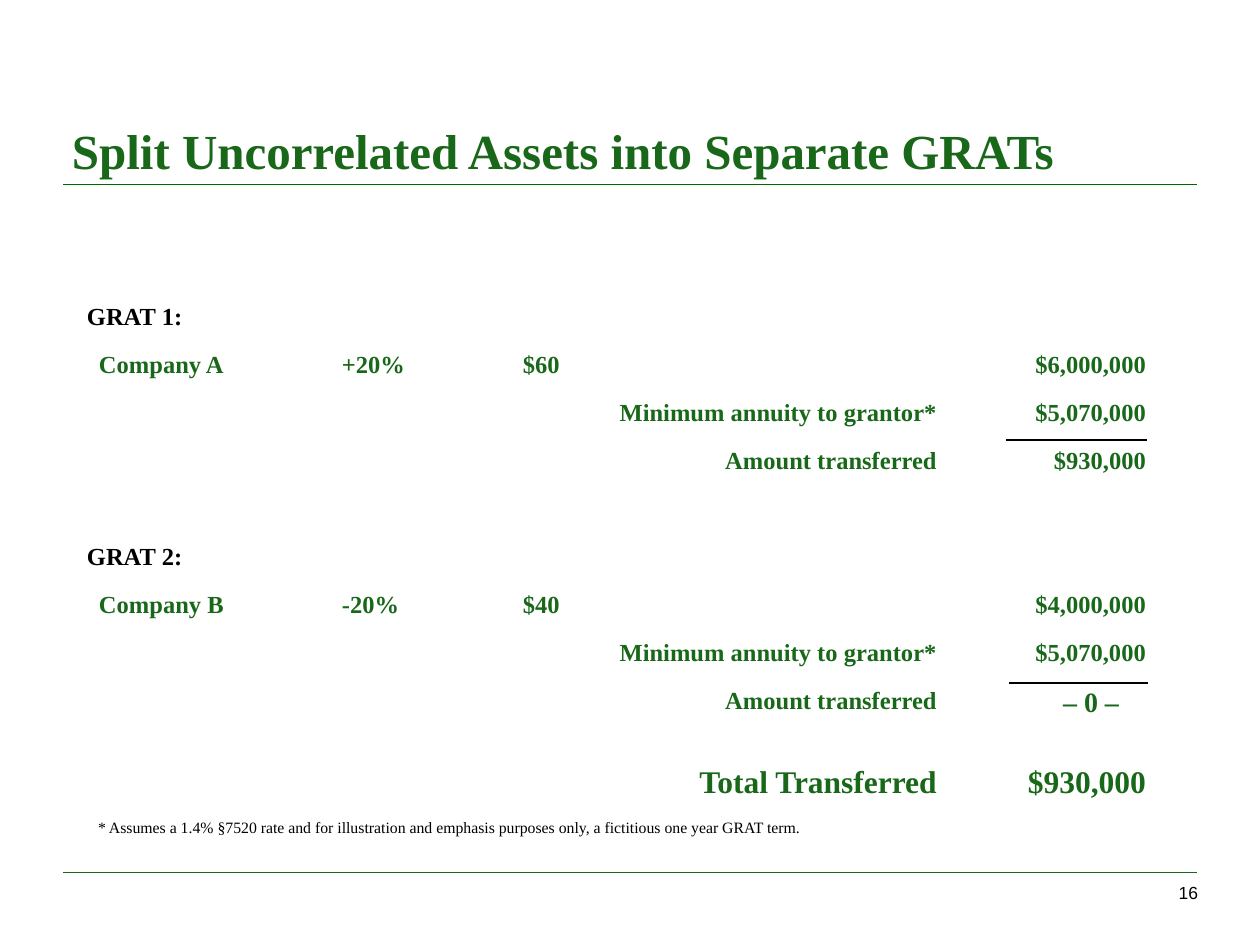
from pptx import Presentation
from pptx.dml.color import RGBColor
from pptx.enum.text import MSO_ANCHOR, PP_ALIGN
from pptx.oxml.xmlchemy import OxmlElement
from pptx.util import Emu, Pt

PX = 914400 // 126  # EMU in one px
GREEN = RGBColor(0x19, 0x68, 0x19)
RULE_GREEN = RGBColor(0x00, 0x66, 0x00)
BLACK = RGBColor(0, 0, 0)
SERIF, SANS = "Times New Roman", "Arial"

TITLE = "Split Uncorrelated Assets into Separate GRATs"
FOOTNOTE = ("* Assumes a 1.4% §7520 rate and for illustration and emphasis "
            "purposes only, a fictitious one year GRAT term.")
PAGE_NUMBER = "16"

# Table rows: row height, text size, four cells
ANNUITY, TRANSFERRED = "Minimum annuity to grantor*", "Amount transferred"
ROWS = [
    (48, 14, ("GRAT 1:", "", "", "")),
    (48, 14, ("Company A", "+20%", "$60", "$6,000,000")),
    (48, 14, ("", "", ANNUITY, "$5,070,000")),
    (48, 14, ("", "", TRANSFERRED, "$930,000")),
    (48, 14, ("", "", "", "")),
    (48, 14, ("GRAT 2:", "", "", "")),
    (48, 14, ("Company B", "-20%", "$40", "$4,000,000")),
    (48, 14, ("", "", ANNUITY, "$5,070,000")),
    (53, 14, ("", "", TRANSFERRED, "– 0 –")),
    (24, 5, ("", "", "", "")),
    (48, 18, ("", "", "Total Transferred", "$930,000")),
]
COLUMNS = (255, 181, 436, 209)
TABLE_LEFT, TABLE_TOP = 76, 296
SIDE, EDGE = 11, 5  # cell and box margins
ENTRY_INDENT, ZERO_MARGIN, ZERO_SIZE = 23, 38, 16

# Lines: start x, end x, y, colour, width in points
LINES = [
    (63, 1197, 184, RULE_GREEN, 0.5),
    (63, 1197, 872, GREEN, 0.5),
    (1006, 1147, 440, BLACK, 1.5),
    (1009, 1148, 683, BLACK, 1.5),
]


def px(value):
    return Emu(value * PX)


def add_span(para, text, size, color, font=SERIF, bold=False):
    span = para.add_run()
    span.text = text
    span.font.name, span.font.size = font, Pt(size)
    span.font.bold, span.font.color.rgb = bold, color


def set_margins(target, side, edge):
    target.margin_left = target.margin_right = px(side)
    target.margin_top = target.margin_bottom = px(edge)


def add_text(page, place, text, size, color, font=SERIF, bold=False,
             align=PP_ALIGN.LEFT, anchor=MSO_ANCHOR.TOP, margins=(0, 0)):
    box = page.shapes.add_textbox(*map(px, place))
    frame = box.text_frame
    frame.word_wrap = True
    frame.vertical_anchor = anchor
    set_margins(frame, *margins)
    para = frame.paragraphs[0]
    para.alignment = align
    add_span(para, text, size, color, font, bold)


def add_line(page, start, end, y, color, width):
    line = page.shapes.add_connector(1, px(start), px(y), px(end), px(y))
    line.line.color.rgb = color
    line.line.width = Pt(width)
    line._element.spPr.append(OxmlElement("a:effectLst"))


def fill_cell(cell, text, size, column):
    cell.fill.background()
    set_margins(cell, SIDE, EDGE)
    para = cell.text_frame.paragraphs[0]
    if not text:  # an empty cell must not stretch its row
        end = OxmlElement("a:endParaRPr")
        end.set("sz", str(size * 100))
        para._p.append(end)
        return
    heading = text.startswith("GRAT")
    if column == 0 and not heading:
        cell.margin_left = px(ENTRY_INDENT)
    if text == "– 0 –":
        size = ZERO_SIZE
        cell.margin_right = px(ZERO_MARGIN)
    right = column == 3 or (column == 2 and not text.startswith("$"))
    para.alignment = PP_ALIGN.RIGHT if right else PP_ALIGN.LEFT
    para.line_spacing = 1.1
    para.space_after = Pt(size * 0.3)
    add_span(para, text, size, BLACK if heading else GREEN, bold=True)


def add_grat_table(page):
    height = sum(row[0] for row in ROWS)
    table = page.shapes.add_table(
        len(ROWS), len(COLUMNS), px(TABLE_LEFT), px(TABLE_TOP),
        px(sum(COLUMNS)), px(height)).table
    table.first_row = table.horz_banding = False
    for column, width in zip(table.columns, COLUMNS):
        column.width = px(width)
    for index, (row_height, size, texts) in enumerate(ROWS):
        table.rows[index].height = px(row_height)
        for column, text in enumerate(texts):
            fill_cell(table.cell(index, column), text, size, column)


def main():
    deck = Presentation()
    deck.slide_width, deck.slide_height = px(1260), px(945)
    page = deck.slides.add_slide(deck.slide_layouts[6])

    # Title
    add_text(page, (72, 111, 1188, 68), TITLE, 28, GREEN, bold=True,
             anchor=MSO_ANCHOR.BOTTOM)
    # Calculation for both trusts, with rules and sum lines
    add_grat_table(page)
    for line in LINES:
        add_line(page, *line)
    # Footnote and page number
    add_text(page, (87, 813, 1032, 49), FOOTNOTE, 9, BLACK,
             margins=(SIDE, EDGE))
    add_text(page, (1104, 882, 94, 35), PAGE_NUMBER, 10, BLACK, SANS,
             align=PP_ALIGN.RIGHT)
    deck.save("out.pptx")


if __name__ == "__main__":
    main()
